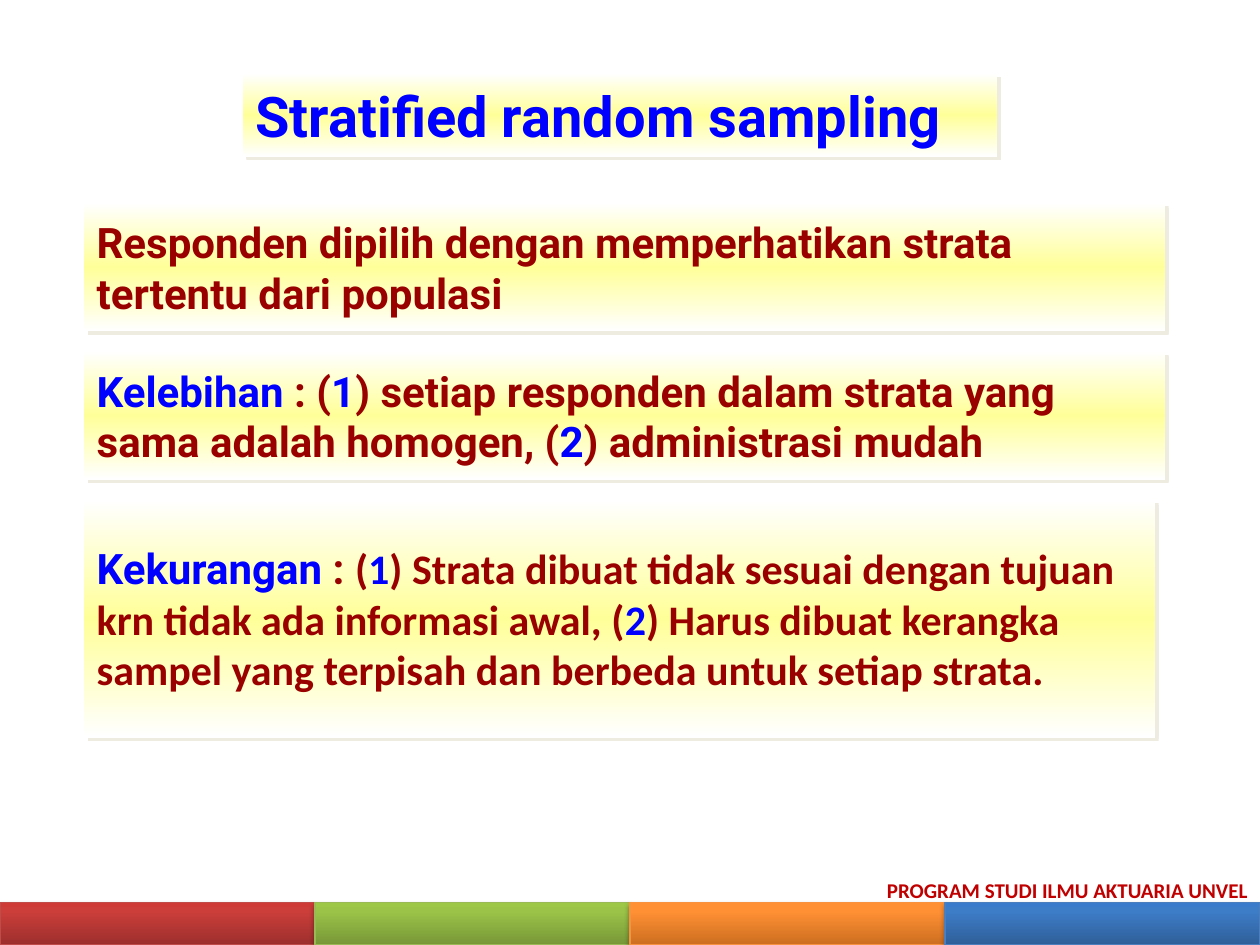
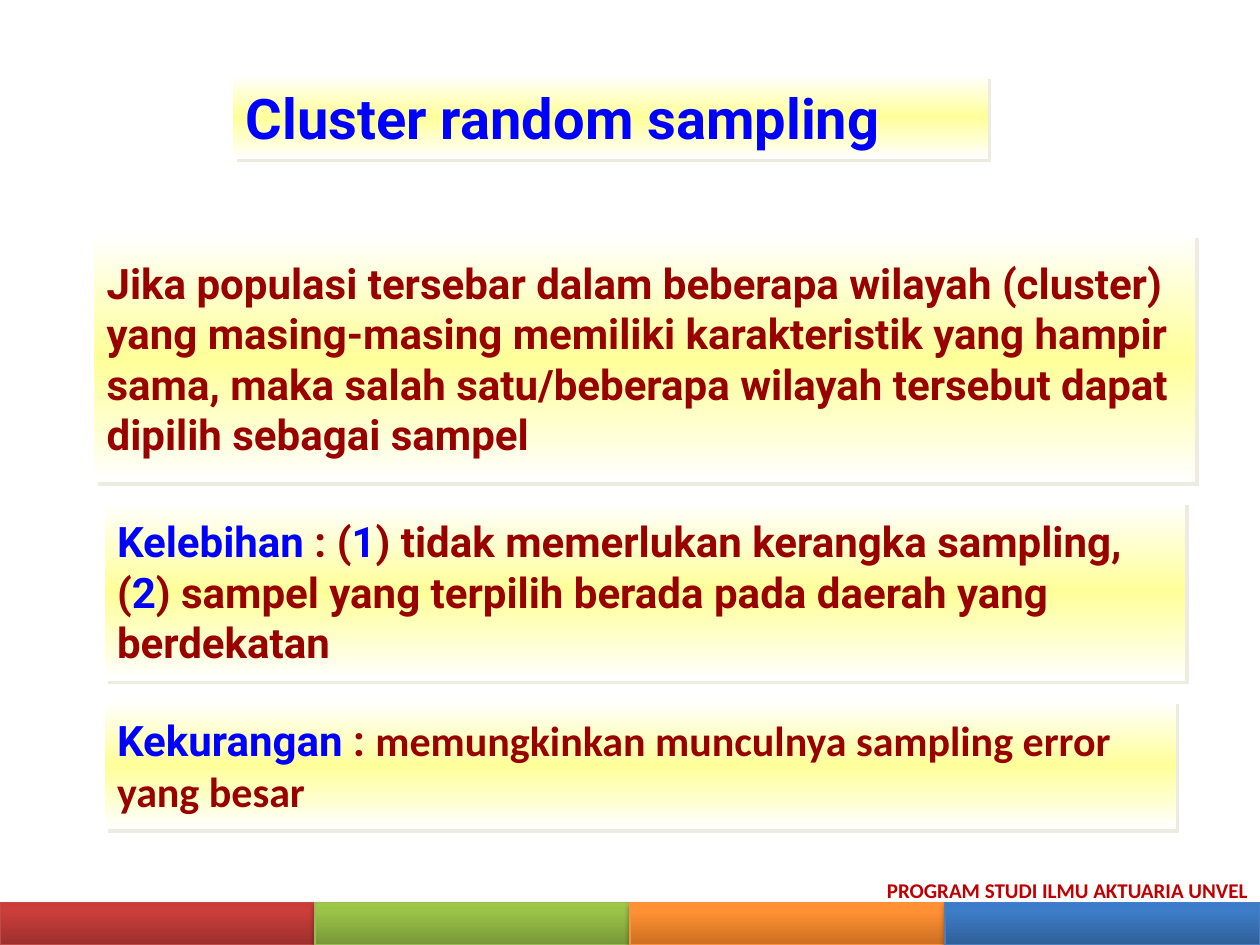
from dataclasses import dataclass
from typing import NamedTuple

import pptx
import pptx.dml.color
import pptx.enum.shapes
import pptx.enum.text
import pptx.oxml
import pptx.oxml.ns
import pptx.util
from pptx.util import Cm

COLOURS = {
    "white": "FFFFFF",
    "cream": "FFFF99",
    "card shadow": "EEECE1",
    "blue": "0000FF",
    "maroon": "990000",
    "footer": "C00000",
    "band shadow": "000000",
}
HEAD_FONT, BODY_FONT = "Roboto", "Calibri"
CARD_GAP = 0.4
BAND_TOP, BAND_HEIGHT, BAND_WIDTH = 18.2, 0.85, 6.35


class Span(NamedTuple):
    text: str
    colour: str = "maroon"
    font: str = HEAD_FONT


class Gradient(NamedTuple):
    stops: tuple[tuple[int, str], ...]
    angle: int


class Shadow(NamedTuple):
    colour: str
    opacity: int
    blur: float
    distance: float
    angle: int


class Band(NamedTuple):
    bottom: str
    middle: str
    top: str
    line: str


@dataclass
class Card:
    left: float
    width: float
    height: float
    spans: list[Span]


@dataclass
class SlideContent:
    title: str
    title_left: float
    title_top: float
    cards_top: float
    cards: list[Card]


CARD_FILL = Gradient(((0, COLOURS["white"]), (50, COLOURS["cream"]),
                      (100, COLOURS["white"])), 90)
CARD_SHADOW = Shadow(COLOURS["card shadow"], 100, 0, 2.8, 45)
BAND_SHADOW = Shadow(COLOURS["band shadow"], 35, 3.1, 1.8, 90)

BANDS = [
    Band("9C2F2D", "CB3E3A", "CE3B37", "BF4C48"),
    Band("779737", "9BC348", "9DC746", "98B955"),
    Band("CC6E20", "FF9034", "FF9136", "F69240"),
    Band("2F5F99", "3D7CC7", "3A7CCB", "4B7EBC"),
]

ADVANTAGE = Span("Kelebihan", "blue")
DRAWBACK = Span("Kekurangan", "blue")

SLIDES = [
    SlideContent("Stratified random sampling", 4.9, 1.48, 4.09, [
        Card(1.7, 21.79, 2.59, [
            Span("Responden dipilih dengan memperhatikan strata tertentu dari populasi"),
        ]),
        Card(1.7, 21.79, 2.59, [
            ADVANTAGE, Span(" : ("), Span("1", "blue"),
            Span(") setiap responden dalam strata yang sama adalah homogen, ("),
            Span("2", "blue"), Span(") administrasi mudah"),
        ]),
        Card(1.7, 21.59, 4.8, [
            DRAWBACK, Span(" : "), Span("(", font=BODY_FONT),
            Span("1", "blue", BODY_FONT),
            Span(") Strata dibuat tidak sesuai dengan tujuan krn tidak ada "
                 "informasi awal, (", font=BODY_FONT),
            Span("2", "blue", BODY_FONT),
            Span(") Harus dibuat kerangka sampel yang terpisah dan berbeda "
                 "untuk setiap strata.", font=BODY_FONT),
        ]),
    ]),
    SlideContent("Cluster random sampling", 4.7, 1.52, 4.72, [
        Card(1.9, 22.2, 5.0, [
            Span("Jika populasi tersebar dalam beberapa wilayah (cluster) yang "
                 "masing-masing memiliki karakteristik yang hampir sama, maka "
                 "salah satu/beberapa wilayah tersebut dapat dipilih sebagai sampel"),
        ]),
        Card(2.11, 21.79, 3.61, [
            ADVANTAGE, Span(" : ("), Span("1", "blue"),
            Span(") tidak memerlukan kerangka sampling, ("), Span("2", "blue"),
            Span(") sampel yang terpilih berada pada daerah yang berdekatan"),
        ]),
        Card(2.11, 21.59, 2.59, [
            DRAWBACK, Span(" : "),
            Span("memungkinkan munculnya sampling error yang besar", font=BODY_FONT),
        ]),
    ]),
]


def rgb(value: str) -> pptx.dml.color.RGBColor:
    return pptx.dml.color.RGBColor.from_string(value)


def set_gradient(shape, gradient: Gradient) -> None:
    stops = "".join(f'<a:gs pos="{position * 1000}"><a:srgbClr val="{colour}"/></a:gs>'
                    for position, colour in gradient.stops)
    shape.fill.background()
    properties = shape._element.spPr
    properties.replace(
        properties.find(pptx.oxml.ns.qn("a:noFill")),
        pptx.oxml.parse_xml(
            f'<a:gradFill {pptx.oxml.ns.nsdecls("a")} rotWithShape="1">'
            f"<a:gsLst>{stops}</a:gsLst>"
            f'<a:lin ang="{gradient.angle * 60000}" scaled="0"/></a:gradFill>'))


def set_shadow(shape, shadow: Shadow) -> None:
    shape.shadow.inherit = False
    effects = shape._element.spPr.find(pptx.oxml.ns.qn("a:effectLst"))
    effects.append(pptx.oxml.parse_xml(
        f'<a:outerShdw {pptx.oxml.ns.nsdecls("a")} '
        f'blurRad="{pptx.util.Pt(shadow.blur)}" dist="{pptx.util.Pt(shadow.distance)}" '
        f'dir="{shadow.angle * 60000}" algn="ctr" rotWithShape="0">'
        f'<a:srgbClr val="{shadow.colour}"><a:alpha val="{shadow.opacity * 1000}"/>'
        "</a:srgbClr></a:outerShdw>"))


def add_rectangle(page, left: float, top: float, width: float, height: float,
                  gradient: Gradient, shadow: Shadow):
    shape = page.shapes.add_shape(pptx.enum.shapes.MSO_SHAPE.RECTANGLE,
                                  Cm(left), Cm(top), Cm(width), Cm(height))
    set_gradient(shape, gradient)
    shape.line.fill.background()
    set_shadow(shape, shadow)
    return shape


def write_spans(box, spans: list[Span], size: int) -> None:
    """The first span sets the paragraph font; others only name differences."""
    paragraph = box.text_frame.paragraphs[0]
    paragraph.alignment = pptx.enum.text.PP_ALIGN.LEFT
    base = spans[0]
    paragraph.font.size = pptx.util.Pt(size)
    paragraph.font.bold = True
    paragraph.font.name = base.font
    paragraph.font.color.rgb = rgb(COLOURS[base.colour])
    for span in spans:
        run = paragraph.add_run()
        run.text = span.text
        if span.font != base.font:
            run.font.name = span.font
        if span.colour != base.colour:
            run.font.color.rgb = rgb(COLOURS[span.colour])


def add_card(page, card: Card, top: float, size: int = 24) -> None:
    box = add_rectangle(page, card.left, top, card.width, card.height,
                        CARD_FILL, CARD_SHADOW)
    box.text_frame.word_wrap = True
    box.text_frame.vertical_anchor = pptx.enum.text.MSO_ANCHOR.MIDDLE
    write_spans(box, card.spans, size)


def add_footer(page) -> None:
    for index, band in enumerate(BANDS):
        gradient = Gradient(((0, band.bottom), (80, band.middle), (100, band.top)), 270)
        shape = add_rectangle(page, index * BAND_WIDTH, BAND_TOP, BAND_WIDTH,
                              BAND_HEIGHT, gradient, BAND_SHADOW)
        shape.line.color.rgb = rgb(band.line)
        shape.line.width = pptx.util.Pt(0.75)
    box = page.shapes.add_textbox(Cm(17.63), Cm(17.57), Cm(7.98), Cm(0.76))
    box.text_frame.word_wrap = False
    box.text_frame.auto_size = pptx.enum.text.MSO_AUTO_SIZE.SHAPE_TO_FIT_TEXT
    write_spans(box, [Span("PROGRAM STUDI ILMU AKTUARIA UNVEL", "footer", BODY_FONT)], 12)


def add_slide(deck, content: SlideContent) -> None:
    page = deck.slides.add_slide(deck.slide_layouts[6])
    # Title
    title = Card(content.title_left, 15.21, 1.68, [Span(content.title, "blue")])
    add_card(page, title, content.title_top, size=32)
    # Stacked cards
    top = content.cards_top
    for card in content.cards:
        add_card(page, card, top)
        top += card.height + CARD_GAP
    # Coloured bands and programme name
    add_footer(page)


def main() -> None:
    deck = pptx.Presentation()
    deck.slide_width, deck.slide_height = Cm(25.4), Cm(19.05)
    for content in SLIDES:
        add_slide(deck, content)
    deck.save("out.pptx")


if __name__ == "__main__":
    main()
